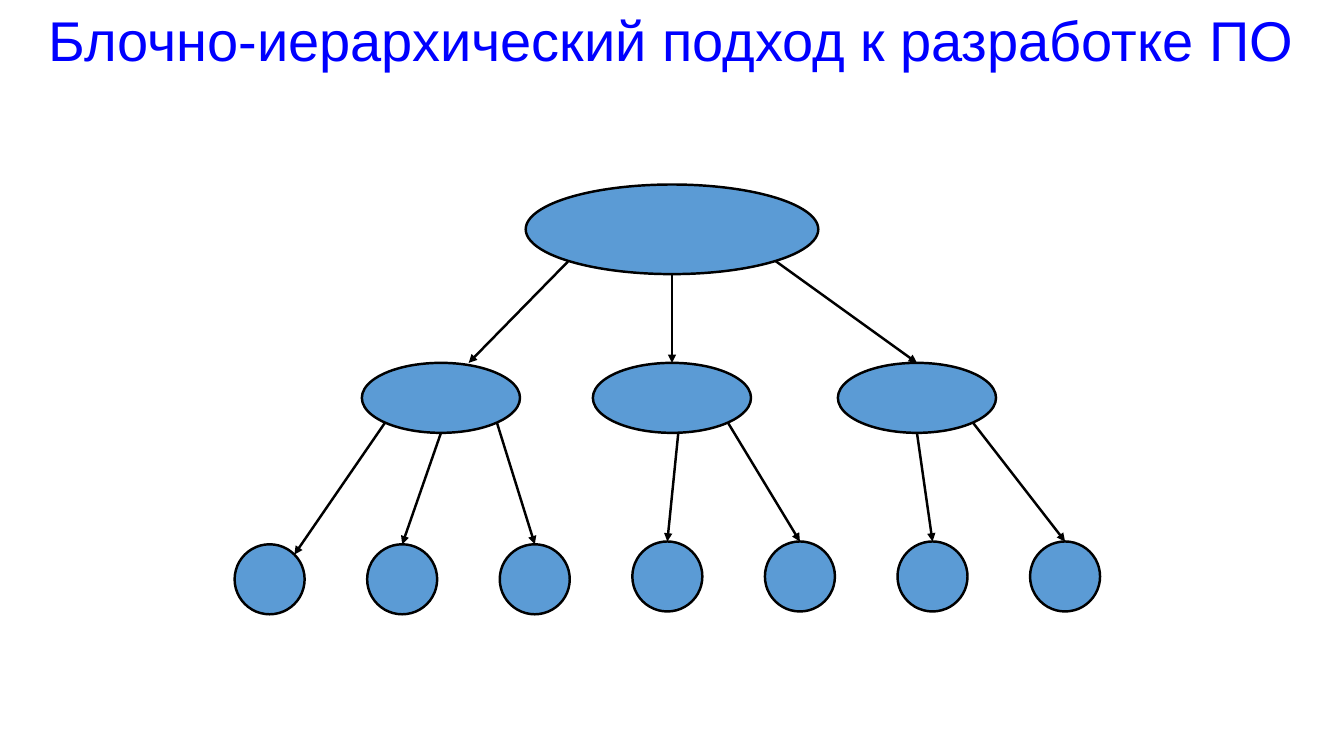
from lxml import etree
from pptx import Presentation
from pptx.dml.color import RGBColor
from pptx.enum import shapes, text
from pptx.oxml.ns import qn
from pptx.util import Pt

BLUE = RGBColor(0x00, 0x00, 0xFF)
NODE_FILL = RGBColor(0x5B, 0x9B, 0xD5)
BLACK = RGBColor(0x00, 0x00, 0x00)
LINE_WIDTH = Pt(1.75)
DIAGONAL = 0.7071

prs = Presentation()
prs.slide_width, prs.slide_height = Pt(960), Pt(540)
s = prs.slides.add_slide(prs.slide_layouts[6])


def add_node(cx, top, width, height):
    """Draw an ellipse and return its centre and radii in points."""
    sp = s.shapes.add_shape(shapes.MSO_SHAPE.OVAL, Pt(cx - width / 2), Pt(top),
                            Pt(width), Pt(height))
    sp.shadow.inherit = False
    sp.fill.solid()
    sp.fill.fore_color.rgb = NODE_FILL
    sp.line.color.rgb = BLACK
    sp.line.width = LINE_WIDTH
    return cx, top + height / 2, width / 2, height / 2


def rim_point(node, dx, dy):
    """Return the point at (dx, dy) radii from the centre of a node."""
    cx, cy, rx, ry = node
    return Pt(cx + dx * rx), Pt(cy + dy * ry)


# Title
title = s.shapes.add_textbox(Pt(-2), Pt(0), Pt(962), Pt(56))
tf = title.text_frame
tf.word_wrap = True
tf.vertical_anchor = text.MSO_ANCHOR.BOTTOM
p = tf.paragraphs[0]
p.alignment = text.PP_ALIGN.CENTER
p.line_spacing = 0.9
r = p.add_run()
r.text = "Блочно-иерархический подход к разработке ПО"
r.font.name = "Arial"
r.font.size = Pt(40)
r.font.color.rgb = BLUE

# Three levels of the hierarchy
root = add_node(480, 131.8, 209, 64)
blocks = [add_node(cx, 259.2, 113, 50) for cx in (315, 480, 655)]
leaves = [add_node(192.6 + 94.7 * i, 388.8 if i < 3 else 386.8, 50, 50)
          for i in range(7)]

# Arrows: parent, its rim point, child, its rim point
TOP, BOTTOM = (0, -1), (0, 1)
LOWER_LEFT, LOWER_RIGHT = (-DIAGONAL, DIAGONAL), (DIAGONAL, DIAGONAL)
UPPER_RIGHT = (DIAGONAL, -DIAGONAL)
arrows = [
    (root, LOWER_LEFT, blocks[0], (0.35, -1)),
    (root, BOTTOM, blocks[1], TOP),
    (root, LOWER_RIGHT, blocks[2], TOP),
    (blocks[0], LOWER_LEFT, leaves[0], UPPER_RIGHT),
    (blocks[0], BOTTOM, leaves[1], TOP),
    (blocks[0], LOWER_RIGHT, leaves[2], TOP),
    (blocks[1], (0.08, 1), leaves[3], TOP),
    (blocks[1], LOWER_RIGHT, leaves[4], TOP),
    (blocks[2], BOTTOM, leaves[5], TOP),
    (blocks[2], LOWER_RIGHT, leaves[6], TOP),
]
for parent, start, child, end in arrows:
    arrow = s.shapes.add_connector(shapes.MSO_CONNECTOR.STRAIGHT,
                                   *rim_point(parent, *start),
                                   *rim_point(child, *end))
    arrow.line.color.rgb = BLACK
    arrow.line.width = LINE_WIDTH
    ln = arrow.line._get_or_add_ln()
    etree.SubElement(ln, qn("a:tailEnd"), type="triangle")
    etree.SubElement(ln.getparent(), qn("a:effectLst"))

prs.save("out.pptx")
